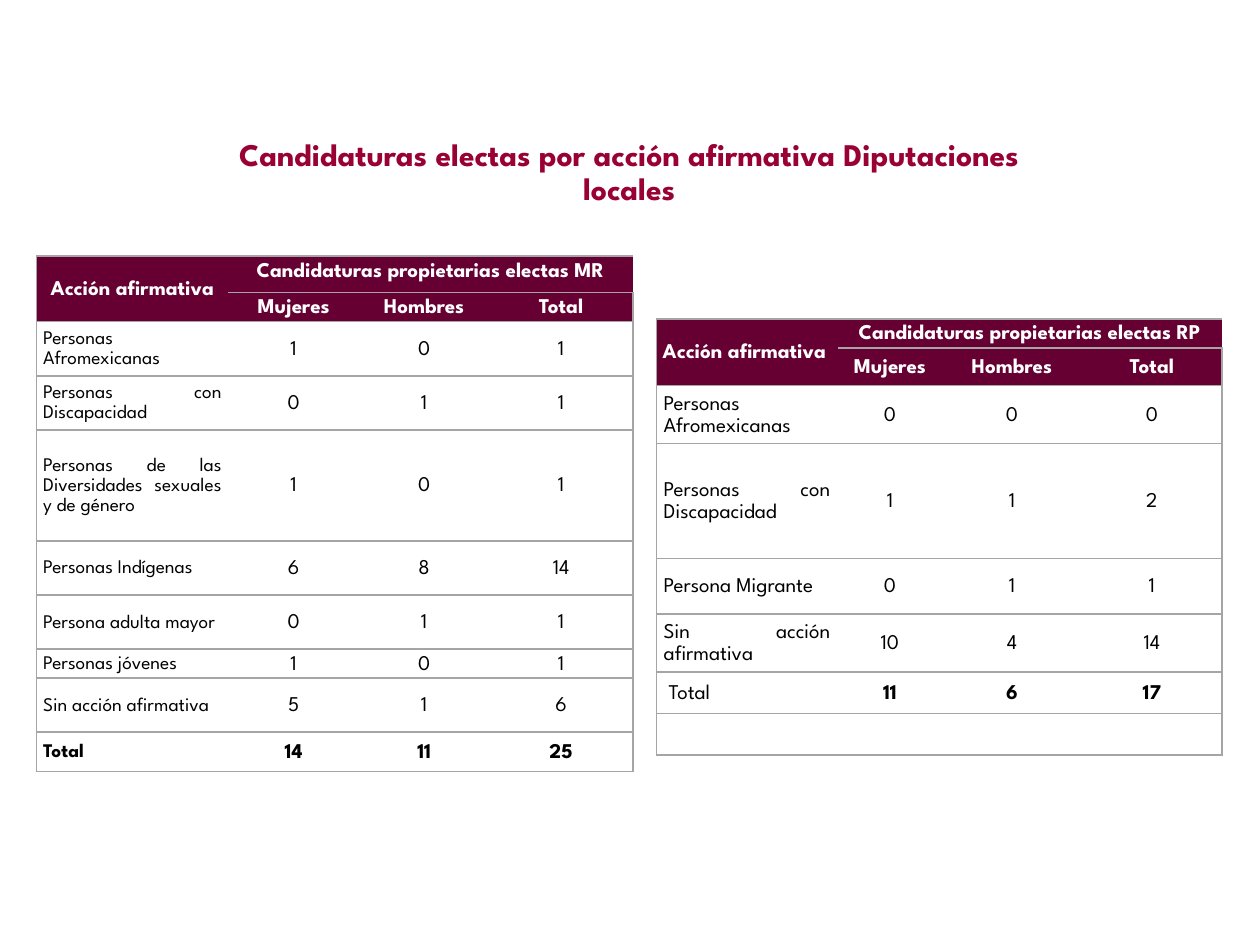
from lxml.etree import SubElement
from pptx import Presentation
from pptx.dml.color import RGBColor
from pptx.enum.text import MSO_ANCHOR, PP_ALIGN
from pptx.oxml.ns import qn
from pptx.util import Cm, Pt

FONT = "League Spartan"
COLORS = {"title": "990033", "header": "660033", "body": "FFFFFF",
          "header_text": "FFFFFF", "text": "000000", "border": "A5A5A5"}
TITLE = "Candidaturas electas por acción afirmativa Diputaciones locales"
COLUMN_NAMES = ("Mujeres", "Hombres", "Total")
TABLES = [
    {
        "heading": "Candidaturas propietarias electas MR",
        "left": 0.74, "top": 5.16,
        "columns": (3.86, 2.64, 2.62, 2.9),
        "heights": (0.74, 0.51, 1.09, 1.09, 2.24, 1.09, 1.09, 0.58, 1.09, 0.79),
        "label_size": 11, "body_margin": 0.13, "total_indent": 0,
        "bold_total": True, "corner_align": PP_ALIGN.CENTER,
        "heading_at_top": True,
        "rows": [
            ("Personas Afromexicanas", 1, 0, 1),
            ("Personas con Discapacidad", 0, 1, 1),
            ("Personas de las Diversidades sexuales y de género", 1, 0, 1),
            ("Personas Indígenas", 6, 8, 14),
            ("Persona adulta mayor", 0, 1, 1),
            ("Personas jóvenes", 1, 0, 1),
            ("Sin acción afirmativa", 5, 1, 6),
            ("Total", 14, 11, 25),
        ],
    },
    {
        "heading": "Candidaturas propietarias electas RP",
        "left": 13.23, "top": 6.43,
        "columns": (3.66, 2.1, 2.82, 2.82),
        "heights": (0.43, 0.76, 1.17, 2.31, 1.12, 1.12, 0.84, 0.84),
        "label_size": 12, "body_margin": 0.15, "total_indent": 0.1,
        "bold_total": False, "corner_align": PP_ALIGN.LEFT,
        "heading_at_top": False,
        "rows": [
            ("Personas Afromexicanas", 0, 0, 0),
            ("Personas con Discapacidad", 1, 1, 2),
            ("Persona Migrante", 0, 1, 1),
            ("Sin acción afirmativa", 10, 4, 14),
            ("Total", 11, 6, 17),
            ("", "", "", ""),
        ],
    },
]


def write(text_frame, text, size, color, bold, align, spacing):
    text_frame.text = text
    paragraph = text_frame.paragraphs[0]
    paragraph.alignment = align
    paragraph.line_spacing = spacing
    for run in paragraph.runs:
        run.font.name = FONT
        run.font.size = Pt(size)
        run.font.bold = bold
        run.font.color.rgb = RGBColor.from_string(COLORS[color])


def style_cell(cell, fill, margin, sides):
    properties = cell._tc.get_or_add_tcPr()
    for side in ("L", "R", "T", "B"):
        line = SubElement(properties, qn(f"a:ln{side}"), w=str(Pt(1)))
        if side in sides:
            solid = SubElement(line, qn("a:solidFill"))
            SubElement(solid, qn("a:srgbClr"), val=COLORS["border"])
        else:
            SubElement(line, qn("a:noFill"))
    cell.fill.solid()
    cell.fill.fore_color.rgb = RGBColor.from_string(COLORS[fill])
    cell.vertical_anchor = MSO_ANCHOR.MIDDLE
    cell.margin_left = cell.margin_right = Cm(margin)
    cell.margin_top = cell.margin_bottom = 0


def add_results(slide, spec_data):
    heights, widths = spec_data["heights"], spec_data["columns"]
    table = slide.shapes.add_table(
        len(heights), len(widths), Cm(spec_data["left"]), Cm(spec_data["top"]),
        Cm(sum(widths)), Cm(sum(heights))).table
    table.first_row = table.horz_banding = False
    for column, width in zip(table.columns, widths):
        column.width = Cm(width)
    for row, height in zip(table.rows, heights):
        row.height = Cm(height)

    header = [("Acción afirmativa", spec_data["heading"], "", ""),
              ("", *COLUMN_NAMES)]
    last = len(widths) - 1
    for r, values in enumerate(header + spec_data["rows"]):
        is_header = r < len(header)
        is_total = values[0] == "Total"
        for c, value in enumerate(values):
            cell = table.cell(r, c)
            sides = "TB" + ("L" if c == 0 else "") + ("R" if c == last else "")
            is_label = c == 0 and not is_header
            style_cell(cell, "header" if is_header else "body",
                       0.13 if is_header else spec_data["body_margin"], sides)
            if value == "":
                continue
            bold = is_header or (is_total and (c > 0 or spec_data["bold_total"]))
            align = PP_ALIGN.JUSTIFY if is_label else PP_ALIGN.CENTER
            write(cell.text_frame, str(value),
                  spec_data["label_size"] if is_label else 12,
                  "header_text" if is_header else "text", bold, align, 1.15)
            if is_label and is_total:
                cell.margin_left += Cm(spec_data["total_indent"])

    corner, heading = table.cell(0, 0), table.cell(0, 1)
    corner.text_frame.paragraphs[0].alignment = spec_data["corner_align"]
    if spec_data["heading_at_top"]:
        heading.vertical_anchor = MSO_ANCHOR.TOP
        heading.margin_top = Cm(0.13)
        heading.text_frame.paragraphs[0].line_spacing = 1.0
    corner.merge(table.cell(1, 0))
    heading.merge(table.cell(0, last))


def main():
    presentation = Presentation()
    presentation.slide_width, presentation.slide_height = Cm(25.4), Cm(19.05)
    slide = presentation.slides.add_slide(presentation.slide_layouts[6])
    title = slide.shapes.add_textbox(Cm(3.73), Cm(2.62), Cm(17.91), Cm(1.75))
    title.text_frame.word_wrap = True
    title.text_frame.vertical_anchor = MSO_ANCHOR.MIDDLE
    write(title.text_frame, TITLE, 18, "title", True, PP_ALIGN.CENTER, 0.9)
    for results in TABLES:
        add_results(slide, results)
    presentation.save("out.pptx")


if __name__ == "__main__":
    main()
